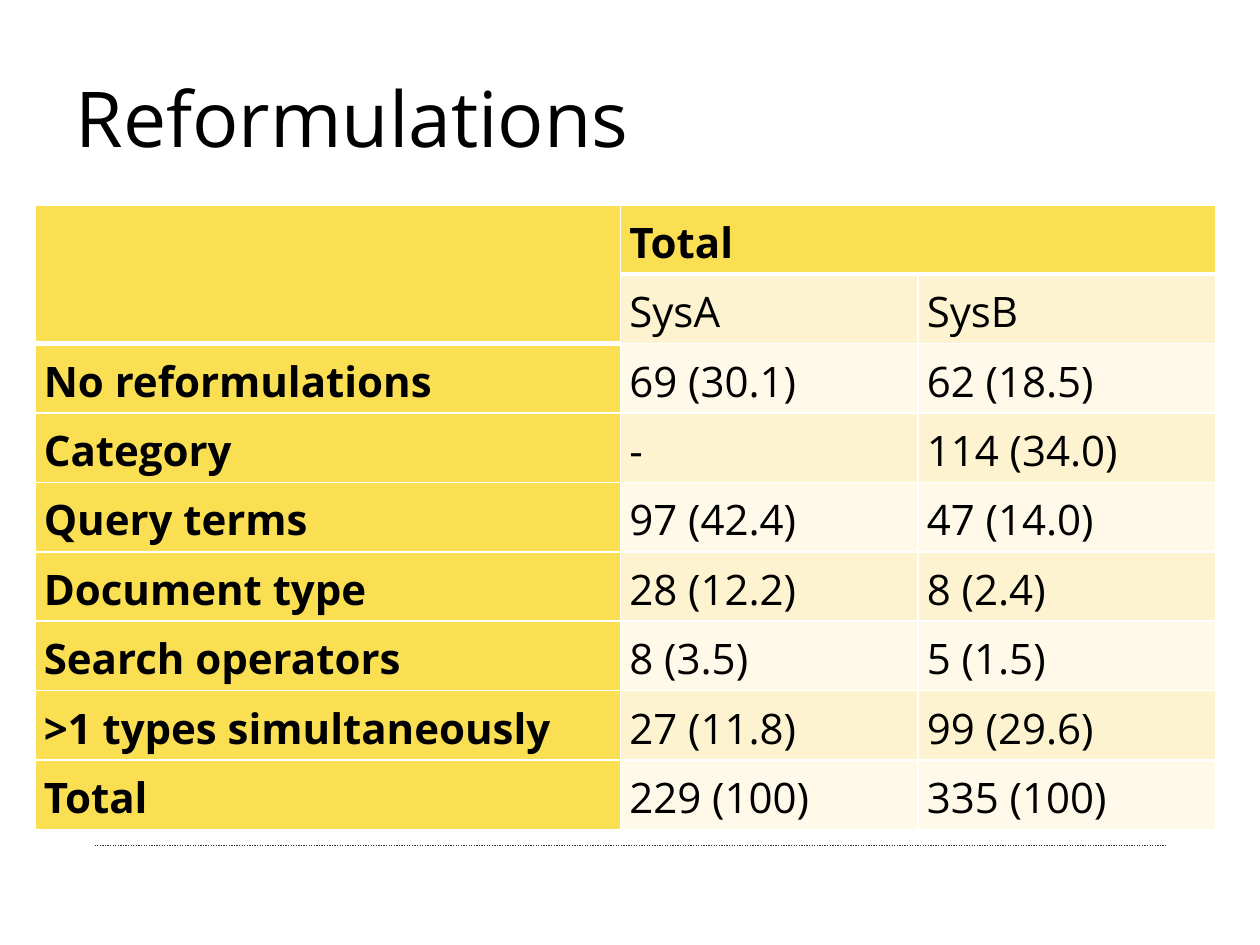
from dataclasses import dataclass

from lxml import etree
from pptx import Presentation
from pptx.dml.color import RGBColor
from pptx.enum.dml import MSO_LINE
from pptx.enum.shapes import MSO_CONNECTOR
from pptx.enum.text import MSO_ANCHOR, PP_ALIGN
from pptx.oxml.ns import qn
from pptx.util import Pt

STRAIGHT = MSO_CONNECTOR.STRAIGHT
DOTTED = MSO_LINE.ROUND_DOT
MIDDLE = MSO_ANCHOR.MIDDLE
LEFT = PP_ALIGN.LEFT
TITLE_ONLY = 5


@dataclass(frozen=True)
class Theme:
    """Colours and type of the slide."""
    font: str = "Open Sans"
    title_size: int = 44
    table_size: int = 24
    line_spacing: float = 1.15
    text: str = "000000"
    rule: str = "333333"
    grid: str = "FFFFFF"
    heading: str = "FBDF53"
    bands: tuple = ("FEF9E9", "FDF3D1")


THEME = Theme()
ROWS = [
    ("", "Total\u00a0".strip(), ""),
    ("", "SysA", "SysB"),
    ("No reformulations", "69 (30.1)", "62 (18.5)"),
    ("Category", "-", "114 (34.0)"),
    ("Query terms", "97 (42.4)", "47 (14.0)"),
    ("Document type", "28 (12.2)", "8 (2.4)"),
    ("Search operators", "8 (3.5)", "5 (1.5)"),
    (">1 types simultaneously", "27 (11.8)", "99 (29.6)"),
    ("Total", "229 (100)", "335 (100)"),
]
COLUMN_SHARES = (0.496, 0.252, 0.252)


def style_paragraph(para, size, bold=False):
    """Set the font of a whole paragraph."""
    font = para.font
    font.name, font.size, font.bold = THEME.font, Pt(size), bold
    font.color.rgb = RGBColor.from_string(THEME.text)


def add_border(cell, side, width):
    """Draw one solid edge of a table cell."""
    edge = etree.SubElement(cell._tc.get_or_add_tcPr(), qn(f"a:ln{side}"), w=str(Pt(width)))
    fill = etree.SubElement(edge, qn("a:solidFill"))
    etree.SubElement(fill, qn("a:srgbClr"), val=THEME.grid)


def format_cell(cell, text, row, column):
    """Fill, frame and label a cell according to its place in the grid."""
    last_heading_row = 1 if column == 0 else 0
    is_heading = column == 0 or row == 0
    widths = {
        "L": 1,
        "R": 1,
        "T": 3 if row == last_heading_row + 1 else 1,
        "B": 3 if row == last_heading_row else 1,
    }
    for side, width in widths.items():
        add_border(cell, side, width)
    cell.fill.solid()
    colour = THEME.heading if is_heading else THEME.bands[row % 2]
    cell.fill.fore_color.rgb = RGBColor.from_string(colour)
    cell.margin_left = cell.margin_right = Pt(5)
    cell.margin_top = cell.margin_bottom = Pt(0)
    para = cell.text_frame.paragraphs[0]
    para.text = text
    para.line_spacing = THEME.line_spacing
    style_paragraph(para, THEME.table_size, is_heading)


def place_title(page, text, left, top, width, height):
    """Place the title in its box."""
    title = page.shapes.title
    title.left, title.top, title.width, title.height = map(Pt, (left, top, width, height))
    frame = title.text_frame
    frame.vertical_anchor = MIDDLE
    para = frame.paragraphs[0]
    para.text = text
    para.alignment = LEFT
    style_paragraph(para, THEME.title_size)


def place_table(page, left, top, width, height):
    """Place the table of reformulation counts in its box."""
    frame = page.shapes.add_table(
        len(ROWS), len(COLUMN_SHARES), Pt(left), Pt(top), Pt(width), Pt(height))
    table = frame.table
    for column, share in zip(table.columns, COLUMN_SHARES):
        column.width = Pt(width * share)
    for row, values in enumerate(ROWS):
        table.rows[row].height = Pt(height / len(ROWS))
        for column, text in enumerate(values):
            format_cell(table.cell(row, column), text, row, column)
    table.cell(0, 0).merge(table.cell(1, 0))
    table.cell(0, 1).merge(table.cell(0, 2))


def place_footer_rule(page, left, top, width):
    """Place the dotted rule above the footer."""
    rule = page.shapes.add_connector(
        STRAIGHT, Pt(left), Pt(top), Pt(left + width), Pt(top))
    rule.line.color.rgb = RGBColor.from_string(THEME.rule)
    rule.line.width = Pt(0.75)
    rule.line.dash_style = DOTTED
    etree.SubElement(rule._element.spPr, qn("a:effectLst"))


def main():
    """Build the slide and save the deck."""
    deck = Presentation()
    deck.slide_width, deck.slide_height = Pt(720), Pt(540)
    page = deck.slides.add_slide(deck.slide_layouts[TITLE_ONLY])
    place_footer_rule(page, 54, 483, 612)
    place_title(page, "Reformulations", 36, 21.6, 648, 90)
    place_table(page, 20, 117, 674.6, 357)
    deck.save("out.pptx")


if __name__ == "__main__":
    main()
